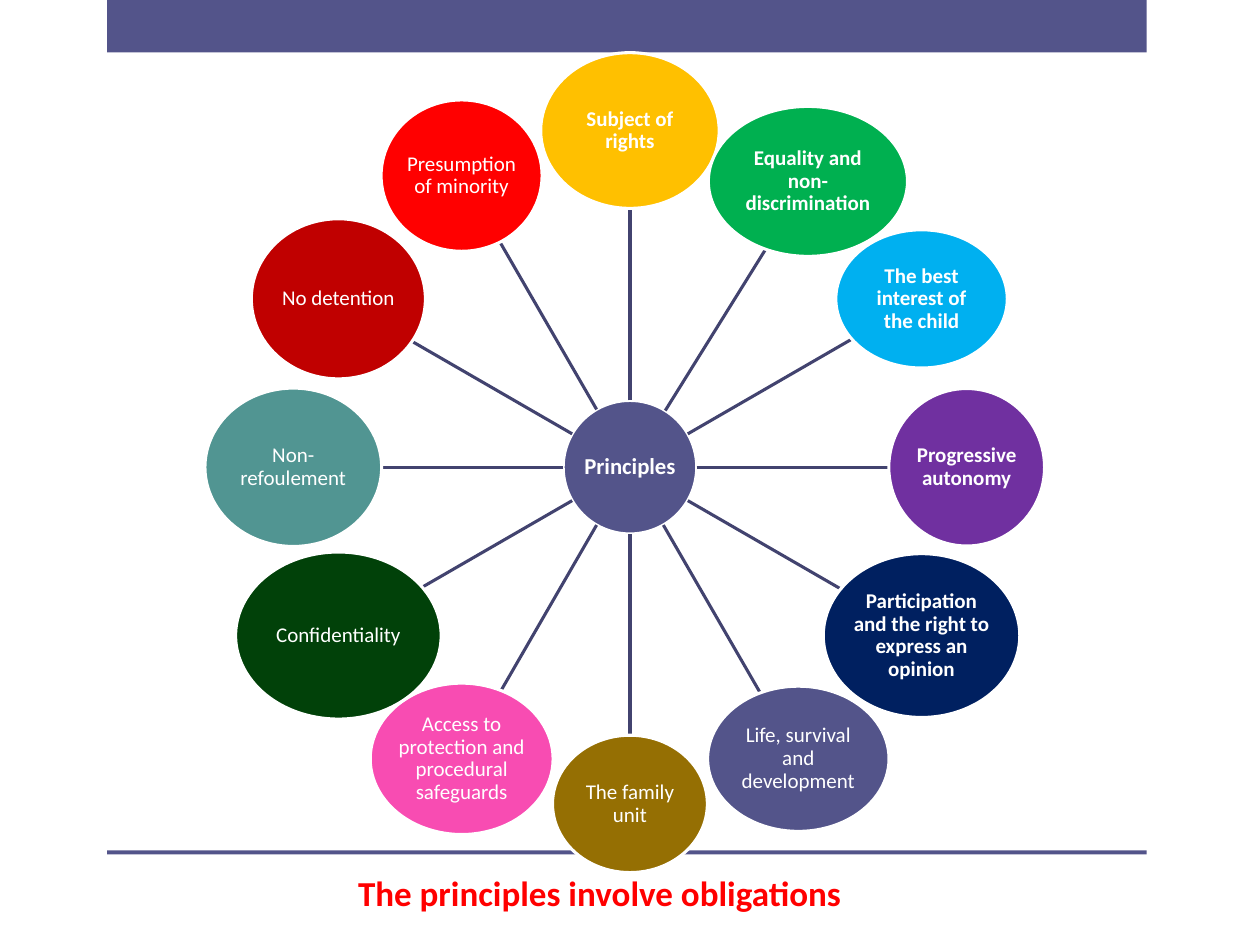
from dataclasses import dataclass
from math import cos, hypot, radians, sin

from pptx import Presentation
from pptx.dml.color import RGBColor as Rgb
from pptx.enum.shapes import MSO_CONNECTOR as Conn, MSO_SHAPE as Geo
from pptx.enum.text import MSO_ANCHOR as Anchor, PP_ALIGN as Align
from pptx.oxml.ns import qn
from pptx.util import Pt
from lxml.etree import SubElement


@dataclass(frozen=True)
class Theme:
    font: str = "Calibri"
    main: str = "53548A"
    spoke: str = "42436F"
    white: str = "FFFFFF"
    alert: str = "FF0000"
    line: float = 1.75
    node: int = 12
    hub: int = 13
    title: int = 20


THEME = Theme()
HUB = 76.3
RADIUS = 192.4

# Text, angle clockwise from the right, width, height, fill, bold
NODES = [
    ("Subject of rights", -90, 102, 89, "FFC000", True),
    ("Equality and non-discrimination", -58.1, 113.8, 85.7, "00B050", True),
    ("The best interest of the child", -30, 98, 79, "00B0F0", True),
    ("Progressive autonomy", 0, 89, 90, "7030A0", True),
    ("Participation and the right to express an opinion",
     30, 112.3, 93.6, "002060", True),
    ("Life, survival and development", 60, 103.7, 83, THEME.main, False),
    ("The family unit", 90, 88.5, 78.5, "956F03", False),
    ("Access to protection and procedural safeguards",
     120, 104.5, 86.5, "F84CB2", False),
    ("Confidentiality", 150, 117.5, 95.5, "014109", False),
    ("Non-refoulement", 180, 101, 90.5, "519592", False),
    ("No detention", 210, 99.5, 91.5, "C00000", False),
    ("Presumption of minority", 240, 92, 86.5, "FF0000", False),
]


def write(frame, text, size, color, bold):
    frame.word_wrap = True
    para = frame.paragraphs[0]
    para.alignment = Align.CENTER
    run = para.add_run()
    run.text = text
    font = run.font
    font.name, font.size, font.bold = THEME.font, Pt(size), bold
    font.color.rgb = Rgb.from_string(color)
    return para


def add_form(slide, geo, x, y, w, h, fill):
    shape = slide.shapes.add_shape(geo, Pt(x), Pt(y), Pt(w), Pt(h))
    shape.shadow.inherit = False
    shape.fill.solid()
    shape.fill.fore_color.rgb = Rgb.from_string(fill)
    shape.line.fill.background()
    return shape


def add_oval(slide, x, y, w, h, fill, text, size, bold):
    """Place a labelled ellipse around its centre."""
    oval = add_form(slide, Geo.OVAL, x - w / 2, y - h / 2, w, h, fill)
    oval.line.color.rgb = Rgb.from_string(THEME.white)
    oval.line.width = Pt(THEME.line)
    frame = oval.text_frame
    frame.margin_left = frame.margin_right = Pt(0.7)
    frame.margin_top = frame.margin_bottom = Pt(0.7)
    frame.vertical_anchor = Anchor.MIDDLE
    write(frame, text, size, THEME.white, bold).line_spacing = 0.9


def add_spoke(slide, x1, y1, x2, y2):
    spoke = slide.shapes.add_connector(
        Conn.STRAIGHT, Pt(x1), Pt(y1), Pt(x2), Pt(y2))
    spoke.line.color.rgb = Rgb.from_string(THEME.spoke)
    spoke.line.width = Pt(THEME.line)
    SubElement(spoke.element.spPr, qn("a:effectLst"))


def add_bars(slide, x, y, w, h):
    """Top band and bottom rule."""
    add_form(slide, Geo.RECTANGLE, x, y, w, 30, THEME.main)
    add_form(slide, Geo.RECTANGLE, x, y + h - 2.2, w, 2.2, THEME.main)


def add_wheel(slide, x, y, w, h):
    """Hub in the middle of the box, with a ring of nodes around it."""
    cx, cy = x + w / 2, y + h / 2
    add_oval(slide, cx, cy, HUB, HUB, THEME.main, "Principles",
             THEME.hub, True)
    for text, angle, wide, high, fill, bold in NODES:
        dx, dy = cos(radians(angle)), sin(radians(angle))
        # Each spoke runs from the hub's edge to the node's edge
        near = HUB / 2
        far = RADIUS - 1 / hypot(2 * dx / wide, 2 * dy / high)
        add_spoke(slide, cx + near * dx, cy + near * dy,
                  cx + far * dx, cy + far * dy)
        add_oval(slide, cx + RADIUS * dx, cy + RADIUS * dy, wide, high,
                 fill, text, THEME.node, bold)


def add_title(slide, x, y, w, h):
    box = slide.shapes.add_textbox(Pt(x), Pt(y), Pt(w), Pt(h))
    write(box.text_frame, "The principles involve obligations",
          THEME.title, THEME.alert, True)


def main():
    deck = Presentation()
    deck.slide_width, deck.slide_height = Pt(720), Pt(540)
    slide = deck.slides.add_slide(deck.slide_layouts[6])
    add_bars(slide, 61.2, 0, 594, 488.2)
    add_wheel(slide, 117, 30, 486, 474)
    add_title(slide, 167, 494.6, 351.4, 31.7)
    deck.save("out.pptx")


if __name__ == "__main__":
    main()
